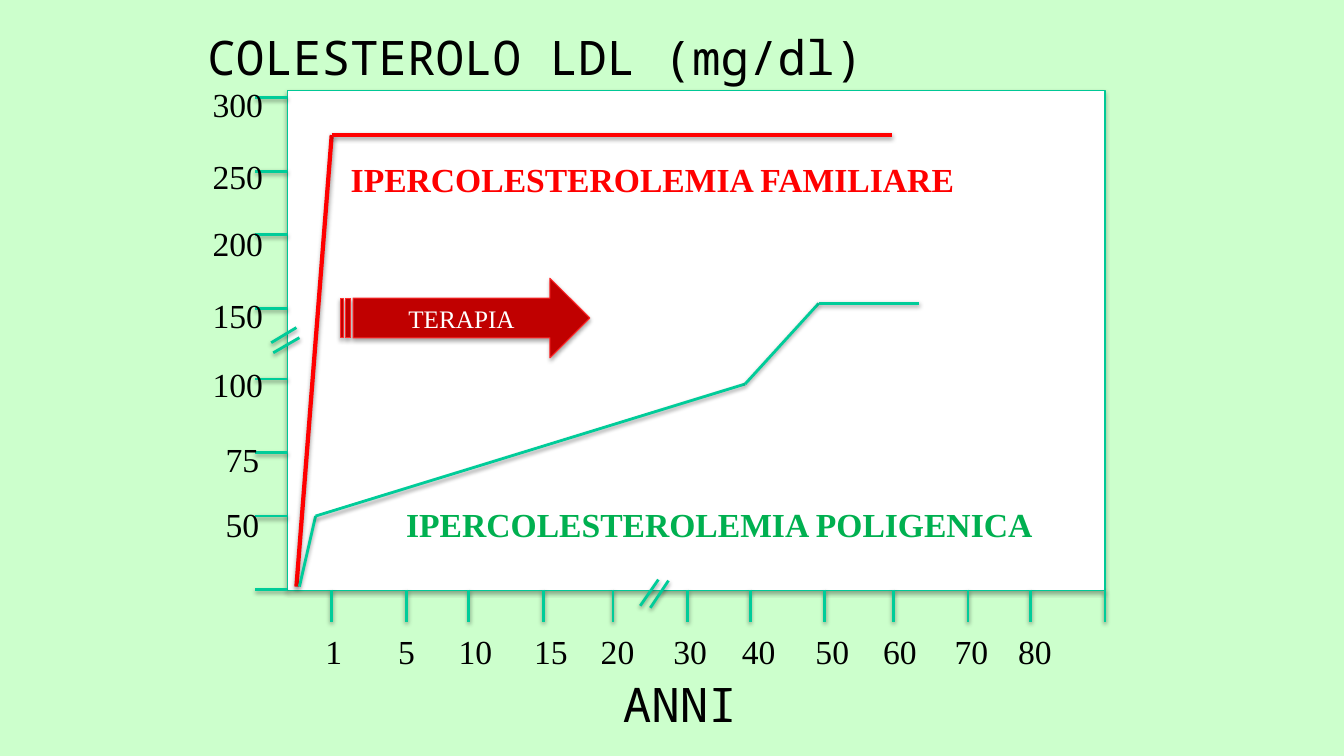
import itertools

import pptx
import pptx.dml.color
import pptx.enum.shapes
import pptx.enum.text
import pptx.oxml
import pptx.oxml.ns
import pptx.util

Inches = pptx.util.Inches
Pt = pptx.util.Pt
RGBColor = pptx.dml.color.RGBColor
ShapeKind = pptx.enum.shapes.MSO_SHAPE

MINT = RGBColor(0xCC, 0xFF, 0xCC)
WHITE = RGBColor(0xFF, 0xFF, 0xFF)
BLACK = RGBColor(0, 0, 0)
AXIS_GREEN = RGBColor(0x00, 0xCC, 0x99)
FRAME_GREEN = RGBColor(0x00, 0xC8, 0x96)
LABEL_GREEN = RGBColor(0x00, 0xB0, 0x50)
RED = RGBColor(0xFF, 0, 0)
DARK_RED = RGBColor(0xC0, 0, 0)
ARROW_EDGE = RGBColor(0xFF, 0x2A, 0x2C)

SERIF = "Times New Roman"
AXIS_TITLE = {"name": "Noto Sans Mono", "size": Pt(34)}
TICK_LABEL = {"name": SERIF, "size": Pt(24)}
CURVE_LABEL = {"name": SERIF, "size": Pt(24), "bold": True}
ARROW_LABEL = {"name": SERIF, "size": Pt(18)}

PLOT_LEFT, PLOT_TOP, PLOT_WIDTH, PLOT_HEIGHT = 2.85, 0.9, 8.11, 4.96
AXIS_Y = 5.85
TICK_LENGTH = 0.32
LABEL_HEIGHT = 0.5

YEAR_TICKS = (3.29, 4.03, 4.65, 5.39, 6.08, 6.82, 7.44, 8.18, 8.86, 9.6, 10.22, 10.96)
LDL_TICKS = (5.85, 5.12, 4.49, 3.76, 3.06, 2.33, 1.7, 0.97)
YEAR_LABELS = {
    "1": 3.13, "5": 3.85, "10": 4.45, "15": 5.2, "20": 5.86, "30": 6.58,
    "40": 7.26, "50": 7.99, "60": 8.66, "70": 9.37, "80": 10,
}
LDL_LABELS = {
    "50": 4.95, "75": 4.31, "100": 3.56, "150": 2.88,
    "200": 2.16, "250": 1.5, "300": 0.78,
}
AXIS_BREAKS = (
    ((6.53, 5.75), (6.35, 6.01)),
    ((6.63, 5.76), (6.45, 6.03)),
    ((2.94, 3.25), (2.69, 3.4)),
    ((2.97, 3.35), (2.71, 3.5)),
)
FAMILIAL_CURVE = ((2.94, 5.82), (3.29, 1.34), (8.85, 1.34))
POLYGENIC_CURVE = ((2.97, 5.82), (3.13, 5.12), (7.39, 3.81), (8.12, 3.01), (9.12, 3.01))


def add_shadow(element, distance, opacity):
    """Cast a soft black shadow straight down; call after fill and line are set."""
    element.spPr.append(pptx.oxml.parse_xml(
        f'<a:effectLst {pptx.oxml.ns.nsdecls("a")}>'
        f'<a:outerShdw blurRad="{Pt(3.1)}" dist="{Pt(distance)}" dir="5400000" '
        'algn="ctr" rotWithShape="0"><a:srgbClr val="000000">'
        f'<a:alpha val="{opacity * 1000}"/></a:srgbClr></a:outerShdw></a:effectLst>'
    ))


def add_line(shapes, start, end, color=AXIS_GREEN, width=2):
    line = shapes.add_connector(
        pptx.enum.shapes.MSO_CONNECTOR.STRAIGHT,
        *(Inches(value) for value in (*start, *end)),
    )
    line.line.color.rgb = color
    line.line.width = Pt(width)
    add_shadow(line._element, 1.6, 38)


def add_curve(shapes, points, color, width):
    curve = shapes.add_group_shape()
    for start, end in itertools.pairwise(points):
        add_line(curve.shapes, start, end, color, width)


def add_block(shapes, kind, box, fill, edge):
    block = shapes.add_shape(kind, *(Inches(value) for value in box))
    block.fill.solid()
    block.fill.fore_color.rgb = fill
    block.line.color.rgb = edge
    block.line.width = Pt(0.75)
    add_shadow(block._element, 1.8, 35)
    return block


def write(frame, text, font_format, color):
    run = frame.paragraphs[0].add_run()
    run.text = text
    for attribute, value in font_format.items():
        setattr(run.font, attribute, value)
    run.font.color.rgb = color


def add_label(shapes, text, box, font_format, color=BLACK):
    label = shapes.add_textbox(*(Inches(value) for value in box))
    label.text_frame.word_wrap = False
    label.text_frame.auto_size = pptx.enum.text.MSO_AUTO_SIZE.SHAPE_TO_FIT_TEXT
    write(label.text_frame, text, font_format, color)


def number_width(text):
    return 0.2 + 0.17 * len(text)


def add_axes(shapes):
    for x in YEAR_TICKS:
        add_line(shapes, (x, AXIS_Y), (x, AXIS_Y + TICK_LENGTH))
    for y in LDL_TICKS:
        add_line(shapes, (PLOT_LEFT - TICK_LENGTH, y), (PLOT_LEFT, y))
    add_label(shapes, "ANNI", (6.08, 6.65, 1.45, 0.67), AXIS_TITLE)
    add_label(shapes, "COLESTEROLO LDL (mg/dl)", (1.96, 0.23, 6.74, 0.67), AXIS_TITLE)
    for year, left in YEAR_LABELS.items():
        add_label(shapes, year, (left, 6.21, number_width(year), LABEL_HEIGHT), TICK_LABEL)
    for level, top in LDL_LABELS.items():
        left = 2.01 if len(level) == 3 else 2.14
        add_label(shapes, level, (left, top, number_width(level), LABEL_HEIGHT), TICK_LABEL)
    for start, end in AXIS_BREAKS:
        add_line(shapes, start, end)


def add_therapy_arrow(shapes):
    therapy = add_block(shapes, ShapeKind.STRIPED_RIGHT_ARROW,
                        (3.38, 2.76, 2.47, 0.79), DARK_RED, ARROW_EDGE)
    therapy.text_frame.vertical_anchor = pptx.enum.text.MSO_ANCHOR.MIDDLE
    therapy.text_frame.paragraphs[0].alignment = pptx.enum.text.PP_ALIGN.CENTER
    write(therapy.text_frame, "TERAPIA", ARROW_LABEL, WHITE)


def main():
    presentation = pptx.Presentation()
    presentation.slide_width = Inches(13.33)
    presentation.slide_height = Inches(7.5)
    slide = presentation.slides.add_slide(presentation.slide_layouts.get_by_name("Blank"))
    slide.background.fill.solid()
    slide.background.fill.fore_color.rgb = MINT
    shapes = slide.shapes

    add_block(shapes, ShapeKind.RECTANGLE,
              (PLOT_LEFT, PLOT_TOP, PLOT_WIDTH, PLOT_HEIGHT), WHITE, FRAME_GREEN)
    add_axes(shapes)
    add_curve(shapes, FAMILIAL_CURVE, RED, 3)
    add_curve(shapes, POLYGENIC_CURVE, AXIS_GREEN, 2)
    add_label(shapes, "IPERCOLESTEROLEMIA FAMILIARE",
              (3.38, 1.53, 6.25, LABEL_HEIGHT), CURVE_LABEL, RED)
    add_label(shapes, "IPERCOLESTEROLEMIA POLIGENICA",
              (3.93, 4.95, 6.48, LABEL_HEIGHT), CURVE_LABEL, LABEL_GREEN)
    add_therapy_arrow(shapes)
    presentation.save("out.pptx")


if __name__ == "__main__":
    main()
